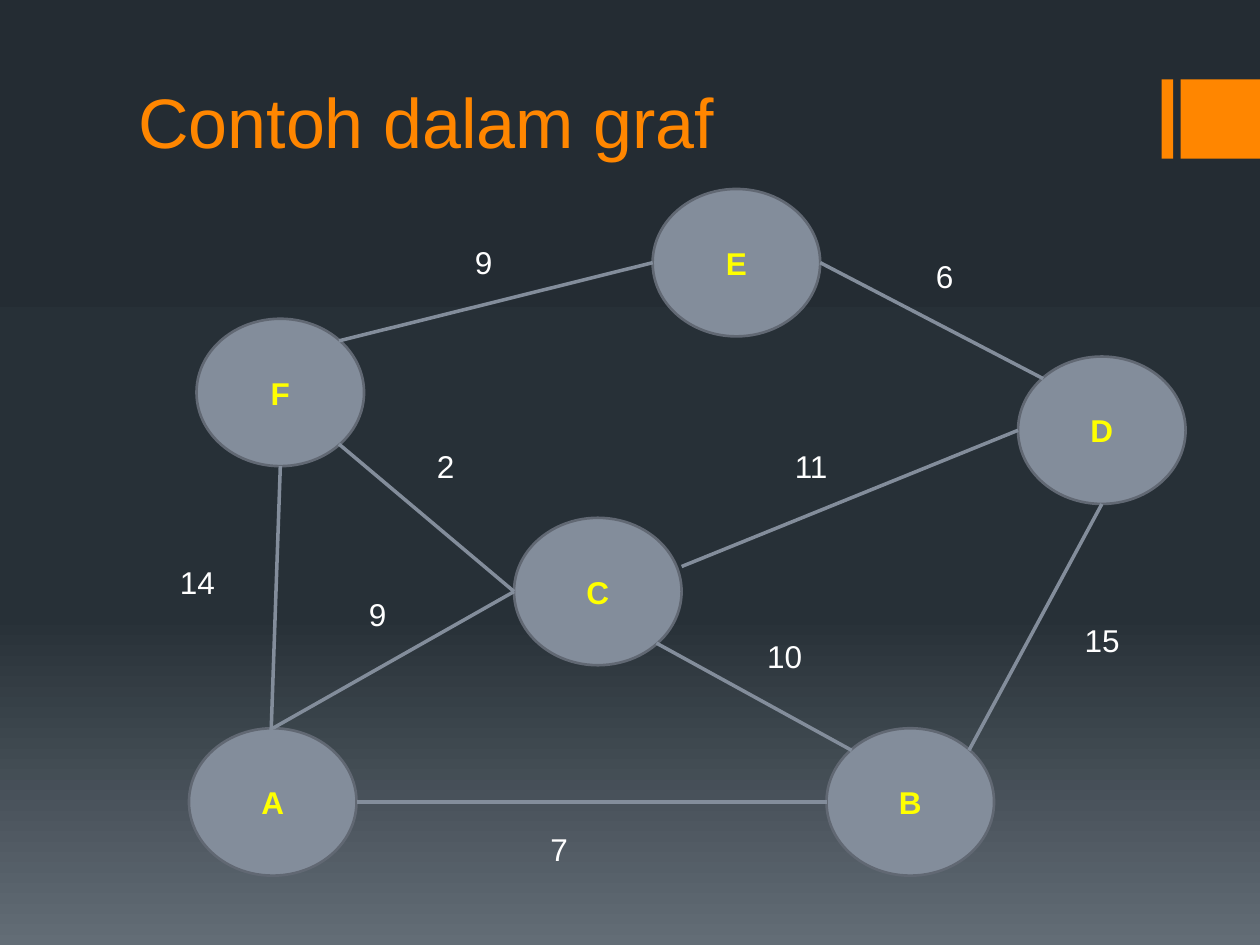
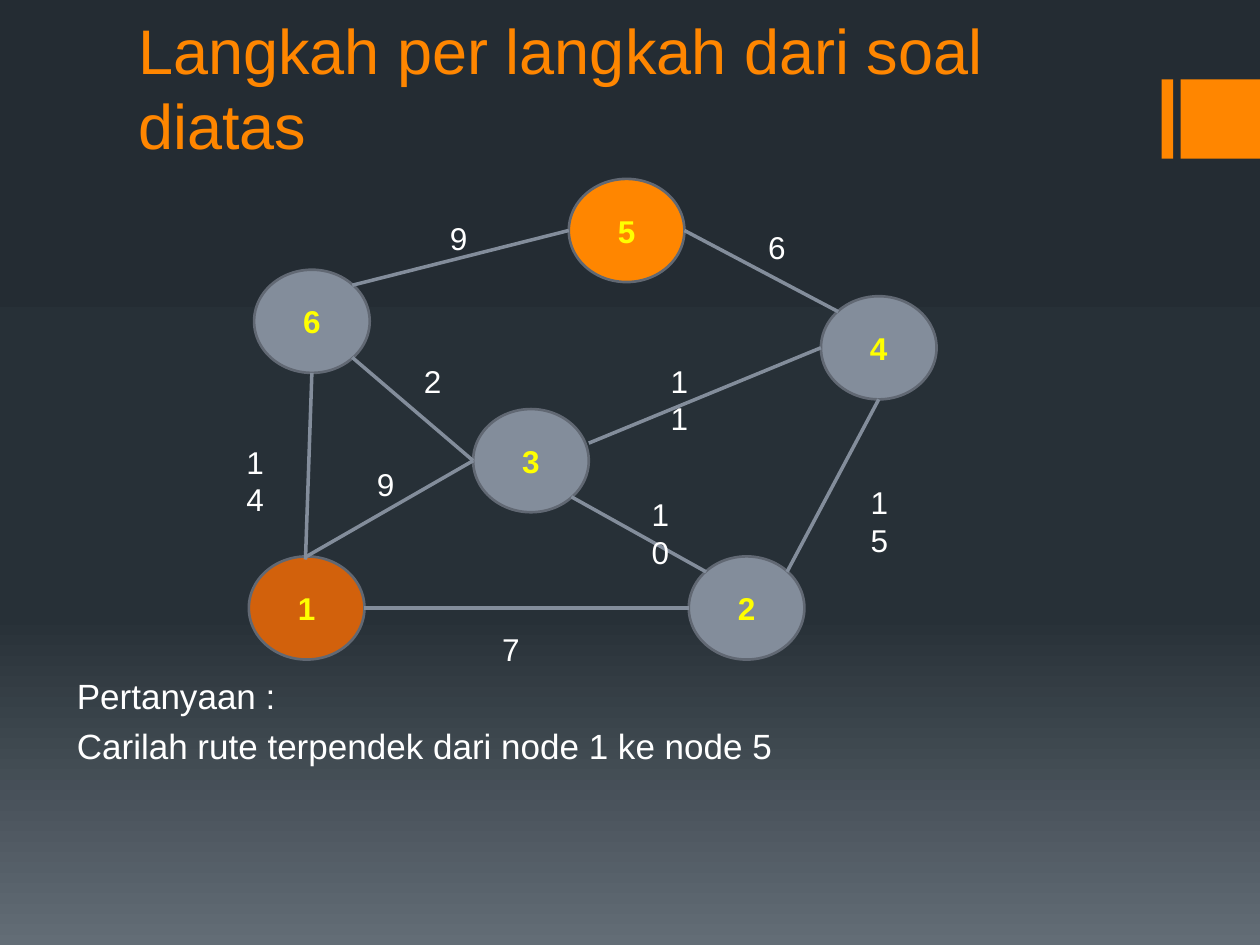
import copy

import pptx
import pptx.dml.color
import pptx.enum.shapes
import pptx.enum.text
import pptx.oxml
import pptx.oxml.ns
import pptx.util

Inches = pptx.util.Inches
Pt = pptx.util.Pt
SHAPE = pptx.enum.shapes.MSO_SHAPE
ANCHOR = pptx.enum.text.MSO_ANCHOR
ALIGN = pptx.enum.text.PP_ALIGN

FONT = "Arial"
COLORS = {
    "accent": "FF8600", "start": "D2610C", "node": "838D9B", "outline": "616873",
    "node_text": "FFFF00", "text": "FFFFFF",
    "sky": "242C33", "dusk": "273037", "horizon": "636D76",
}

# Points on a node, as fractions of its width and height
SITES = {
    "top": (0.5, 0), "left": (0, 0.5), "bottom": (0.5, 1), "right": (1, 0.5),
    "top_left": (0.15, 0.15), "top_right": (0.85, 0.15),
    "bottom_left": (0.15, 0.85), "bottom_right": (0.85, 0.85),
    "upper_right": (1, 0.33), "near_top": (0.49, 0.03),
}

# The graph in full size: nodes by corner, edges with weight and label corner
NODE_SIZE = (1.33, 1.17)
NODES = {
    "F": (1.56, 2.53), "E": (5.18, 1.5), "C": (4.08, 4.11),
    "A": (1.5, 5.78), "B": (6.56, 5.78), "D": (8.08, 2.83),
}
EDGES = [
    ("A", "right", "B", "left", "7", (4.27, 6.54)),
    ("A", "top", "C", "left", "9", (2.83, 4.67)),
    ("B", "top_right", "D", "bottom", "15", (8.51, 4.88)),
    ("C", "upper_right", "D", "left", "11", (6.21, 3.5)),
    ("F", "bottom_right", "C", "left", "2", (3.37, 3.5)),
    ("A", "near_top", "F", "bottom", "14", (1.33, 4.42)),
    ("C", "bottom_right", "B", "top_left", "10", (5.99, 5.01)),
    ("F", "top_right", "E", "left", "9", (3.67, 1.88)),
    ("E", "right", "D", "top_left", "6", (7.33, 1.99)),
]
LABEL_WIDTHS = {1: 0.34, 2: 0.48}
LABEL_HEIGHT = 0.4


def rgb(name):
    return pptx.dml.color.RGBColor.from_string(COLORS[name])


class Deck:
    def __init__(self):
        self.prs = pptx.Presentation()
        self.prs.slide_width, self.prs.slide_height = Inches(10), Inches(7.5)
        self.slide = None
        self.paint_background()

    def paint_background(self):
        """Give the master a three-stop gradient from top to bottom."""
        master = self.prs.slide_master
        fill = master.background.fill
        fill.gradient()
        fill.gradient_angle = 270
        stop_list = next(master.element.iter(pptx.oxml.ns.qn("a:gsLst")))
        stop_list.append(copy.deepcopy(stop_list[-1]))
        stops = ((0, "sky"), (0.65, "dusk"), (1, "horizon"))
        for stop, (position, color) in zip(fill.gradient_stops, stops):
            stop.position = position
            stop.color.rgb = rgb(color)

    def new_slide(self, title, size):
        self.slide = self.prs.slides.add_slide(self.prs.slide_layouts[6])
        for left, width in ((9.22, 0.09), (9.37, 0.63)):
            self.shape(SHAPE.RECTANGLE, left, 0.63, width, 0.63, "accent")
        self.text(title, 1, 0.08, 8, 1.26, size, "accent", anchor=ANCHOR.BOTTOM)

    def shape(self, kind, left, top, width, height, fill, outline=None):
        shape = self.slide.shapes.add_shape(
            kind, Inches(left), Inches(top), Inches(width), Inches(height))
        shape.shadow.inherit = False
        shape.fill.solid()
        shape.fill.fore_color.rgb = rgb(fill)
        if outline:
            shape.line.color.rgb = rgb(outline)
            shape.line.width = Pt(1.5)
        else:
            shape.line.fill.background()
        return shape

    def set_text(self, frame, text, size, color, bold=False, align=ALIGN.LEFT):
        frame.text = text
        for paragraph in frame.paragraphs:
            paragraph.alignment = align
            for run in paragraph.runs:
                run.font.name = FONT
                run.font.size = Pt(size)
                run.font.bold = bold
                run.font.color.rgb = rgb(color)

    def text(self, text, left, top, width, height, size, color="text",
             anchor=ANCHOR.TOP, wrap=True):
        frame = self.slide.shapes.add_textbox(
            Inches(left), Inches(top), Inches(width), Inches(height)).text_frame
        frame.word_wrap = wrap
        frame.vertical_anchor = anchor
        self.set_text(frame, text, size, color)
        return frame

    def node(self, name, left, top, width, height, fill):
        node = self.shape(SHAPE.FLOWCHART_CONNECTOR, left, top, width, height,
                          fill, "outline")
        node.text_frame.vertical_anchor = ANCHOR.MIDDLE
        self.set_text(node.text_frame, name, 18, "node_text", True, ALIGN.CENTER)

    def edge(self, start, end):
        edge = self.slide.shapes.add_connector(
            pptx.enum.shapes.MSO_CONNECTOR.STRAIGHT,
            *(Inches(value) for value in (*start, *end)))
        edge.line.color.rgb = rgb("node")
        edge.line.width = Pt(2)
        edge._element.spPr.append(pptx.oxml.parse_xml(
            "<a:effectLst %s/>" % pptx.oxml.ns.nsdecls("a")))

    def graph(self, names, fills, origin=(0, 0), scale=(1, 1), wrap_labels=False):
        """Draw the graph; names relabels its nodes, fills marks some of them."""
        def place(point):
            return [o + s * p for o, s, p in zip(origin, scale, point)]

        def site(node, side):
            return place([corner + part * length for corner, part, length
                          in zip(NODES[node], SITES[side], NODE_SIZE)])

        width, height = (s * n for s, n in zip(scale, NODE_SIZE))
        for key, corner in NODES.items():
            self.node(names[key], *place(corner), width, height,
                      fills.get(key, "node"))
        for start, start_side, end, end_side, _, _ in EDGES:
            self.edge(site(start, start_side), site(end, end_side))
        for *_, weight, corner in EDGES:
            self.text(weight, *place(corner), LABEL_WIDTHS[len(weight)] * scale[0],
                      LABEL_HEIGHT * scale[1], 18, wrap=wrap_labels)


def main():
    deck = Deck()

    # Slide 1: the lettered graph
    deck.new_slide("Contoh dalam graf", 40)
    deck.graph({key: key for key in NODES}, {})

    # Slide 2: the numbered graph, smaller, with the question below
    deck.new_slide("Langkah per langkah dari soal diatas", 36)
    question = deck.text(
        "Pertanyaan :\nCarilah rute terpendek dari node 1 ke node 5",
        0.46, 5.3, 9.25, 2.15, 20)
    question.margin_left = Inches(0.15)
    question.paragraphs[1].space_before = Pt(5)
    deck.graph(dict(zip("ABCDEF", "123456")), {"A": "start", "E": "accent"},
               origin=(0.94, 0.37), scale=(0.69, 0.7), wrap_labels=True)

    deck.prs.save("out.pptx")


if __name__ == "__main__":
    main()
